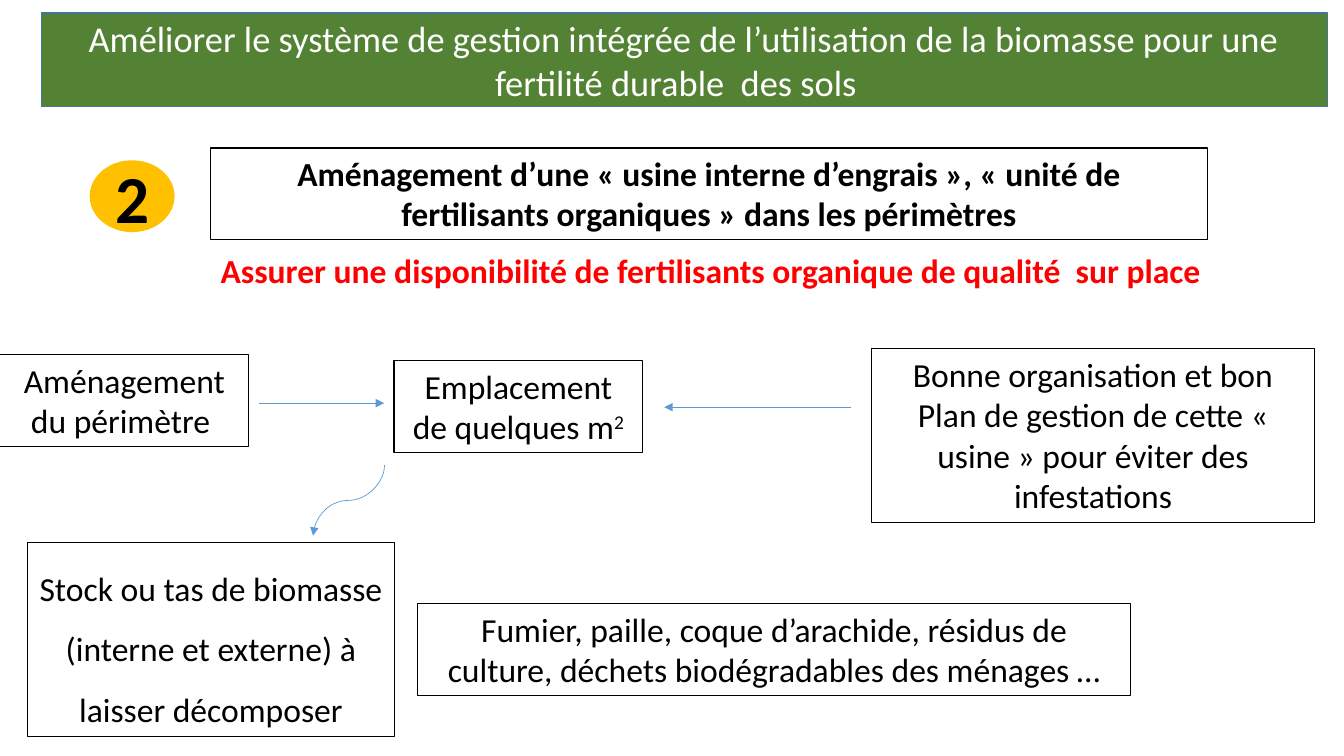
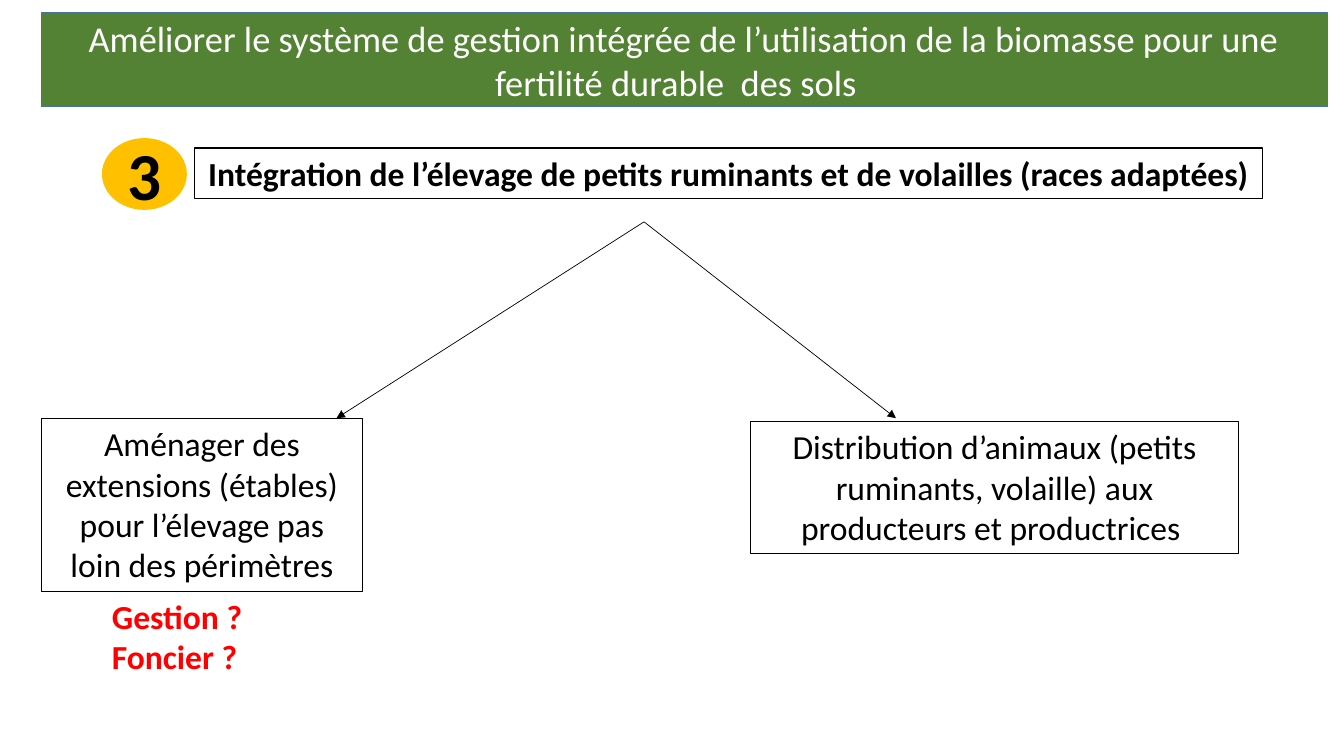
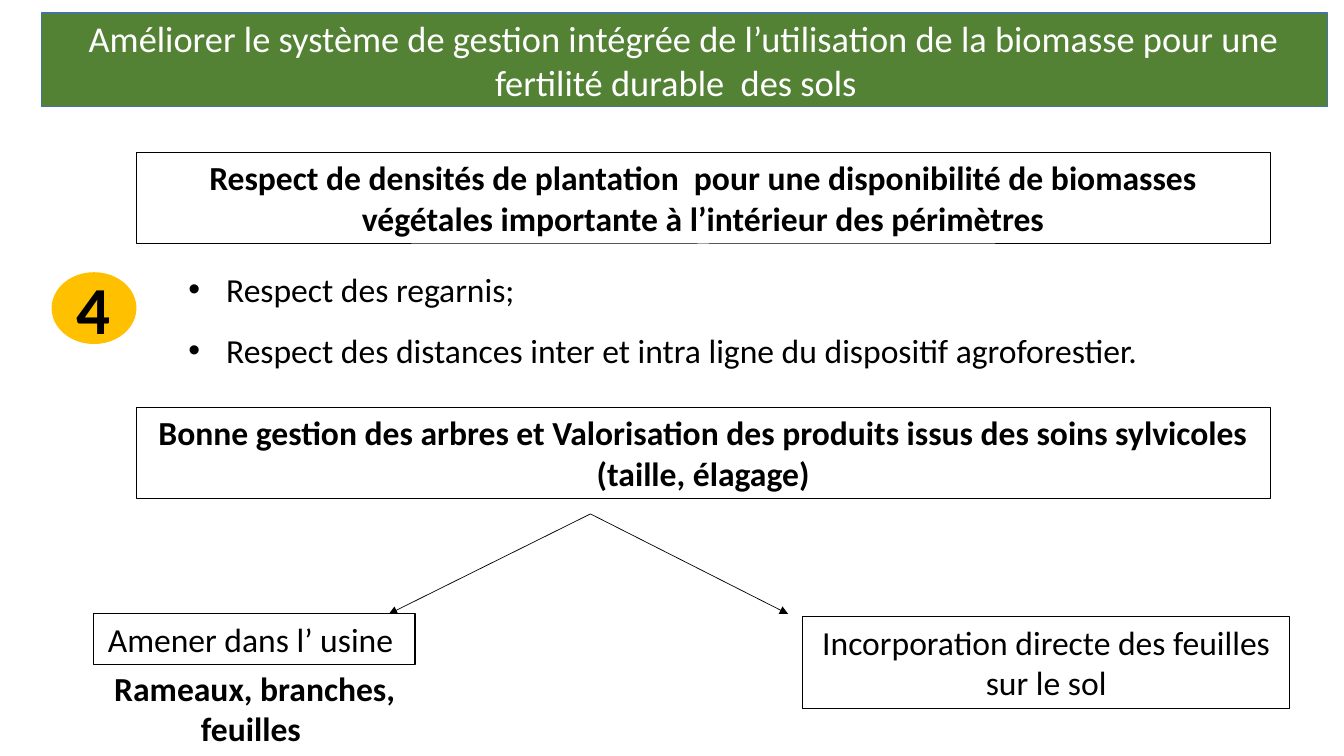
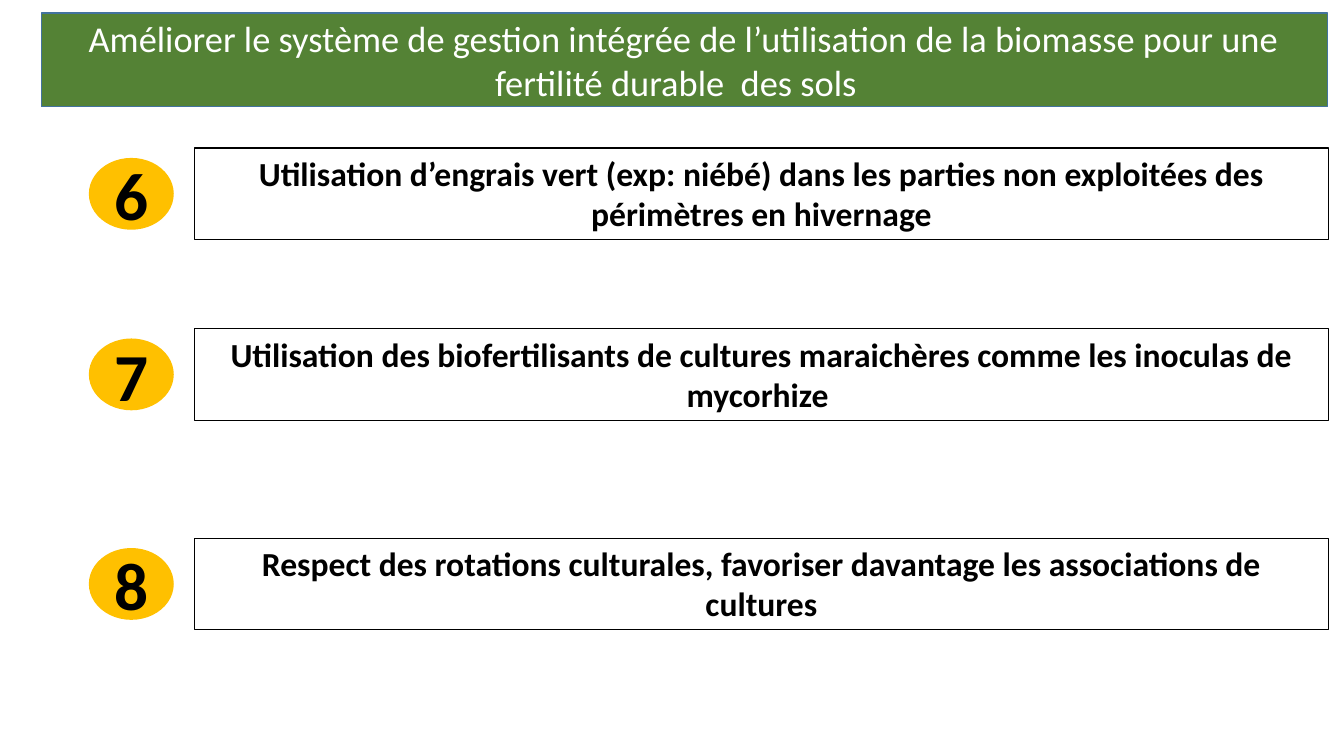
"""Build four slides on biomass management for lasting soil fertility."""
from dataclasses import dataclass

from lxml import etree
from pptx import Presentation
from pptx.dml.color import RGBColor
from pptx.enum import shapes, text
from pptx.oxml.ns import qn
from pptx.util import Cm, Pt


@dataclass(frozen=True)
class Theme:
    font: str = "Calibri"
    black: str = "000000"
    white: str = "FFFFFF"
    red: str = "FF0000"
    green: str = "548235"
    gold: str = "FFC000"
    edge: str = "43739E"
    blue: str = "5B9BD5"
    title: int = 26
    body: int = 24
    badge: int = 48


@dataclass(frozen=True)
class Look:
    frame: bool = True
    bold: bool = False
    color: str = Theme.black
    center: bool = True
    gap: float = 1
    bullet: bool = False


THEME = Theme()
LOOKS = {
    "head": Look(bold=True),
    "body": Look(),
    "loose": Look(gap=1.5),
    "alert": Look(frame=False, bold=True, color=THEME.red, center=False),
    "plain": Look(frame=False, bold=True),
    "list": Look(frame=False, center=False, gap=1.5, bullet=True),
}
TITLE = ("Améliorer le système de gestion intégrée de l’utilisation de la biomasse "
         "pour une fertilité durable  des sols  ")
BAND = (1.04, 0.33, 32.41, 2.36)
BADGE = (2.14, 1.81)
INSET, LINE = 0.25, 1.03
LINKS = {
    "line": shapes.MSO_CONNECTOR.STRAIGHT,
    "bent": shapes.MSO_CONNECTOR.ELBOW,
    "curve": shapes.MSO_CONNECTOR.CURVE,
}

STEPS = [
    (6, 3.73, "Utilisation d’engrais vert (exp: niébé) dans les parties non exploitées "
              "des périmètres en hivernage"),
    (7, 8.28, "Utilisation des biofertilisants de cultures maraichères comme les "
              "inoculas de mycorhize "),
    (8, 13.56, "Respect des rotations culturales, favoriser davantage les associations "
               "de cultures"),
]

# left, top, width, line count, look, text
SLIDES = [
    {
        "boxes": [
            (5.31, 3.73, 25.12, 2, "head", "Aménagement d’une « usine interne d’engrais », "
             "« unité de fertilisants organiques » dans les périmètres"),
            (0.69, 13.67, 9.25, 3, "loose",
             "Stock ou tas de biomasse (interne et externe) à laisser décomposer"),
            (10.52, 15.21, 17.98, 2, "body", "Fumier, paille, coque d’arachide, résidus de "
             "culture, déchets biodégradables des ménages …"),
            (21.97, 8.79, 11.15, 4, "body", "Bonne organisation et bon Plan de gestion de "
             "cette « usine » pour éviter des infestations"),
            (9.93, 9.09, 6.27, 2, "body", "Emplacement de quelques m^2"),
            (0, 8.94, 6.27, 2, "body", "Aménagement du périmètre "),
            (5.31, 6.17, 27.15, 1, "alert",
             "Assurer une disponibilité de fertilisants organique de qualité  sur place"),
        ],
        "badges": [(2.26, 4.04, 2)],
        "arrows": [
            ("bent", (6.53, 10.16), (9.68, 10.16), THEME.blue),
            ("curve", (9.68, 11.71), (7.9, 13.51), THEME.blue),
            ("line", (21.44, 10.26), (16.74, 10.26), THEME.blue),
        ],
    },
    {
        "boxes": [
            (4.9, 3.73, 26.92, 1, "head",
             "Intégration de l’élevage de petits ruminants et de volailles (races adaptées)"),
            (1.04, 10.54, 8.1, 4, "body",
             "Aménager des extensions (étables) pour l’élevage pas loin des périmètres"),
            (18.92, 10.62, 12.29, 3, "body", "Distribution d’animaux (petits ruminants, "
             "volaille) aux producteurs et productrices "),
            (2.57, 14.88, 6.17, 2, "alert", "Gestion ?\nFoncier ?"),
        ],
        "badges": [(2.57, 3.48, 3)],
        "arrows": [("line", (16.23, 5.59), (x, 10.54), THEME.black) for x in (8.48, 22.58)],
    },
    {
        "boxes": [
            (3.43, 3.84, 28.58, 2, "head", "Respect de densités de plantation  pour une "
             "disponibilité de biomasses végétales importante à l’intérieur des périmètres"),
            (4.5, 6.15, 28.3, 2, "list", "Respect des regarnis;\n"
             "Respect des distances inter et intra ligne du dispositif agroforestier."),
            (3.43, 10.26, 28.58, 2, "head", "Bonne gestion des arbres et Valorisation des "
             "produits issus des soins sylvicoles (taille, élagage)"),
            (2.36, 15.47, 8.1, 1, "body", "Amener dans l’ usine "),
            (20.22, 15.54, 12.29, 2, "body", "Incorporation directe des feuilles sur le sol"),
            (2.57, 16.71, 7.7, 2, "plain", "Rameaux, branches, feuilles "),
        ],
        "badges": [(1.3, 6.86, 4)],
        "arrows": [("line", (14.88, 12.95), (x, 15.47), THEME.black) for x in (9.8, 19.86)],
    },
    {
        "boxes": [(4.9, top, 28.58, 2, "head", words) for _, top, words in STEPS],
        "badges": [(2.24, top + 0.25, num) for num, top, _ in STEPS],
        "arrows": [],
    },
]


def rgb(code):
    return RGBColor.from_string(code)


def style(para, size, color, bold=False, center=True):
    para.alignment = text.PP_ALIGN.CENTER if center else text.PP_ALIGN.LEFT
    for run in para.runs:
        run.font.name = THEME.font
        run.font.size = Pt(size)
        run.font.bold = bold
        run.font.color.rgb = rgb(color)


def add_solid(slide, kind, area, fill, words, size, color, bold=False, edge=None):
    shape = slide.shapes.add_shape(kind, *map(Cm, area))
    shape.shadow.inherit = False
    shape.fill.solid()
    shape.fill.fore_color.rgb = rgb(fill)
    if edge:
        shape.line.color.rgb = rgb(edge)
        shape.line.width = Pt(1)
    else:
        shape.line.fill.background()
    frame = shape.text_frame
    frame.word_wrap = True
    frame.vertical_anchor = text.MSO_ANCHOR.MIDDLE
    frame.text = words
    style(frame.paragraphs[0], size, color, bold)


def add_bullet(para):
    props = para._p.get_or_add_pPr()
    props.set("marL", str(Cm(0.95)))
    props.set("indent", str(-Cm(0.95)))
    etree.SubElement(props, qn("a:buFont")).set("typeface", "Arial")
    etree.SubElement(props, qn("a:buChar")).set("char", "•")


def add_box(slide, left, top, width, count, name, words):
    look = LOOKS[name]
    high = INSET + LINE * count * look.gap
    box = slide.shapes.add_textbox(Cm(left), Cm(top), Cm(width), Cm(high))
    if look.frame:
        box.line.color.rgb = rgb(THEME.black)
        box.line.width = Pt(0.75)
    main, _, power = words.partition("^")
    frame = box.text_frame
    frame.word_wrap = True
    frame.auto_size = text.MSO_AUTO_SIZE.SHAPE_TO_FIT_TEXT
    frame.text = main
    if power:
        run = frame.paragraphs[-1].add_run()
        run.text = power
        run._r.get_or_add_rPr().set("baseline", "30000")
    for para in frame.paragraphs:
        style(para, THEME.body, look.color, look.bold, look.center)
        para.line_spacing = look.gap
        if look.bullet:
            add_bullet(para)


def add_arrow(slide, kind, start, end, color):
    (left, top), (right, low) = start, end
    turned = kind == "curve"
    if turned:
        left, right = right, left
    link = slide.shapes.add_connector(LINKS[kind], Cm(left), Cm(top), Cm(right), Cm(low))
    link.line.color.rgb = rgb(color)
    link.line.width = Pt(0.5)
    props = link._element.spPr
    if turned:
        props.find(qn("a:xfrm")).set("rot", "5400000")
    etree.SubElement(props.find(qn("a:ln")), qn("a:tailEnd")).set("type", "triangle")
    etree.SubElement(props, qn("a:effectLst"))


def main():
    deck = Presentation()
    deck.slide_width, deck.slide_height = Cm(33.87), Cm(19.05)
    for plan in SLIDES:
        slide = deck.slides.add_slide(deck.slide_layouts[6])
        add_solid(slide, shapes.MSO_SHAPE.RECTANGLE, BAND, THEME.green, TITLE,
                  THEME.title, THEME.white, edge=THEME.edge)
        for box in plan["boxes"]:
            add_box(slide, *box)
        for left, top, num in plan["badges"]:
            add_solid(slide, shapes.MSO_SHAPE.OVAL, (left, top, *BADGE), THEME.gold,
                      str(num), THEME.badge, THEME.black, bold=True)
        for arrow in plan["arrows"]:
            add_arrow(slide, *arrow)
    deck.save("out.pptx")


if __name__ == "__main__":
    main()
